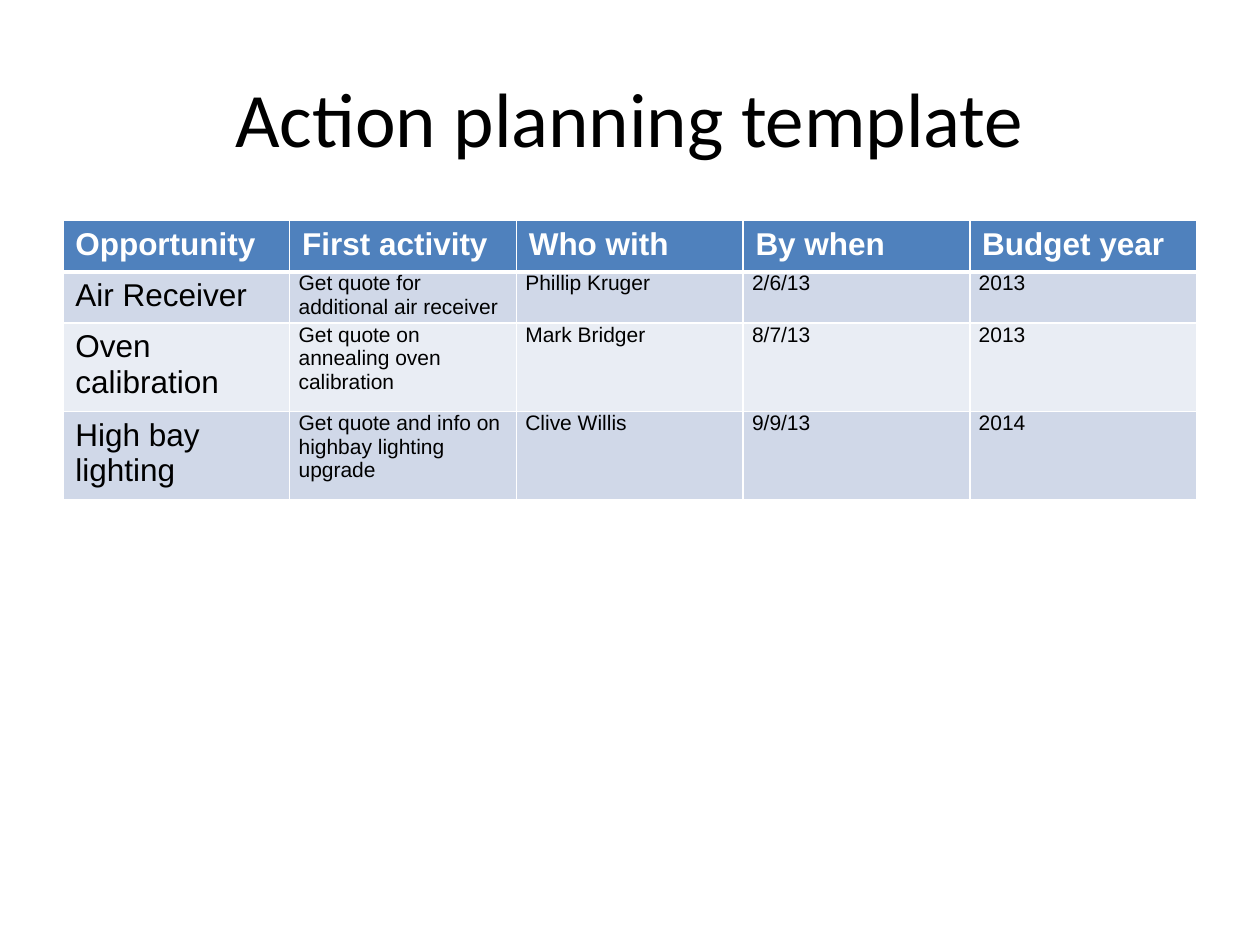
import dataclasses

import lxml.etree
import pptx
import pptx.dml.color
import pptx.enum.text
import pptx.oxml.ns
import pptx.util
from pptx.util import Cm


@dataclasses.dataclass(frozen=True)
class Theme:
    """Colours, fonts and type sizes of the slide."""
    title_font: str = "Calibri"
    table_font: str = "Arial"
    title_size: int = 44
    label_size: int = 18
    detail_size: int = 12
    ink: str = "000000"
    paper: str = "FFFFFF"
    header: str = "4F81BD"
    bands: tuple = ("D0D8E8", "E9EDF4")
    rule: int = 1
    header_rule: int = 3


THEME = Theme()
HEADINGS = ("Opportunity", "First activity", "Who with", "By when", "Budget year")
ACTIONS = (
    ("Air Receiver", "Get quote for additional air receiver", "Phillip Kruger", "2/6/13", "2013"),
    ("Oven calibration", "Get quote on annealing oven calibration", "Mark Bridger", "8/7/13", "2013"),
    ("High bay lighting", "Get quote and info on highbay lighting upgrade", "Clive Willis", "9/9/13", "2014"),
)
COLUMN_WIDTH = Cm(4.57)
ROW_HEIGHTS = (Cm(1.03), Cm(1.03), Cm(1.78), Cm(1.78))


def write_text(frame, text, *, font, size, color, bold=False, align=None, spacing=0):
    """Write one formatted paragraph into a text frame."""
    para = frame.paragraphs[0]
    para.alignment = align
    para.space_before = para.space_after = pptx.util.Pt(spacing)
    span = para.add_run()
    span.text = text
    span.font.name = font
    span.font.size = pptx.util.Pt(size)
    span.font.bold = bold
    span.font.color.rgb = pptx.dml.color.RGBColor.from_string(color)


def add_title(page, text):
    """Add the centred slide title."""
    box = page.shapes.add_textbox(Cm(1.27), Cm(0.76), Cm(22.86), Cm(3.18))
    box.text_frame.word_wrap = True
    box.text_frame.vertical_anchor = pptx.enum.text.MSO_ANCHOR.MIDDLE
    write_text(box.text_frame, text, font=THEME.title_font, size=THEME.title_size,
               color=THEME.ink, align=pptx.enum.text.PP_ALIGN.CENTER)


def set_borders(cell, *, top, bottom):
    """Draw the rules around a cell, with widths in points."""
    qn = pptx.oxml.ns.qn
    properties = cell._tc.get_or_add_tcPr()
    for side, width in (("L", THEME.rule), ("R", THEME.rule), ("T", top), ("B", bottom)):
        line = lxml.etree.SubElement(properties, qn(f"a:ln{side}"), w=str(pptx.util.Pt(width)))
        fill = lxml.etree.SubElement(line, qn("a:solidFill"))
        lxml.etree.SubElement(fill, qn("a:srgbClr"), val=THEME.paper)


def set_cell(cell, text, *, fill, top, bottom, detail=False, **style):
    """Fill a cell with text, margins, rules and background."""
    cell.margin_left = cell.margin_right = Cm(0.18 if detail else 0.25)
    cell.margin_top = cell.margin_bottom = Cm(0 if detail else 0.13)
    set_borders(cell, top=top, bottom=bottom)
    cell.fill.solid()
    cell.fill.fore_color.rgb = pptx.dml.color.RGBColor.from_string(fill)
    write_text(cell.text_frame, text, font=THEME.table_font,
               size=THEME.detail_size if detail else THEME.label_size,
               spacing=6 if detail else 0, **style)


def add_action_table(page):
    """Add the table of planned actions."""
    table = page.shapes.add_table(len(ROW_HEIGHTS), len(HEADINGS), Cm(1.27), Cm(4.45),
                                  COLUMN_WIDTH * len(HEADINGS), sum(ROW_HEIGHTS)).table
    for column in table.columns:
        column.width = COLUMN_WIDTH
    for row, height in zip(table.rows, ROW_HEIGHTS):
        row.height = height
    for index, heading in enumerate(HEADINGS):
        set_cell(table.cell(0, index), heading, fill=THEME.header, color=THEME.paper,
                 bold=True, top=THEME.rule, bottom=THEME.header_rule)
    for number, action in enumerate(ACTIONS):
        top = THEME.rule if number else THEME.header_rule
        for index, text in enumerate(action):
            set_cell(table.cell(number + 1, index), text, fill=THEME.bands[number % 2],
                     color=THEME.ink, top=top, bottom=THEME.rule, detail=index > 0)


def main():
    """Build and save the deck."""
    deck = pptx.Presentation()
    deck.slide_width, deck.slide_height = Cm(25.4), Cm(19.05)
    page = deck.slides.add_slide(deck.slide_layouts[6])
    add_title(page, "Action planning template")
    add_action_table(page)
    deck.save("out.pptx")


if __name__ == "__main__":
    main()
